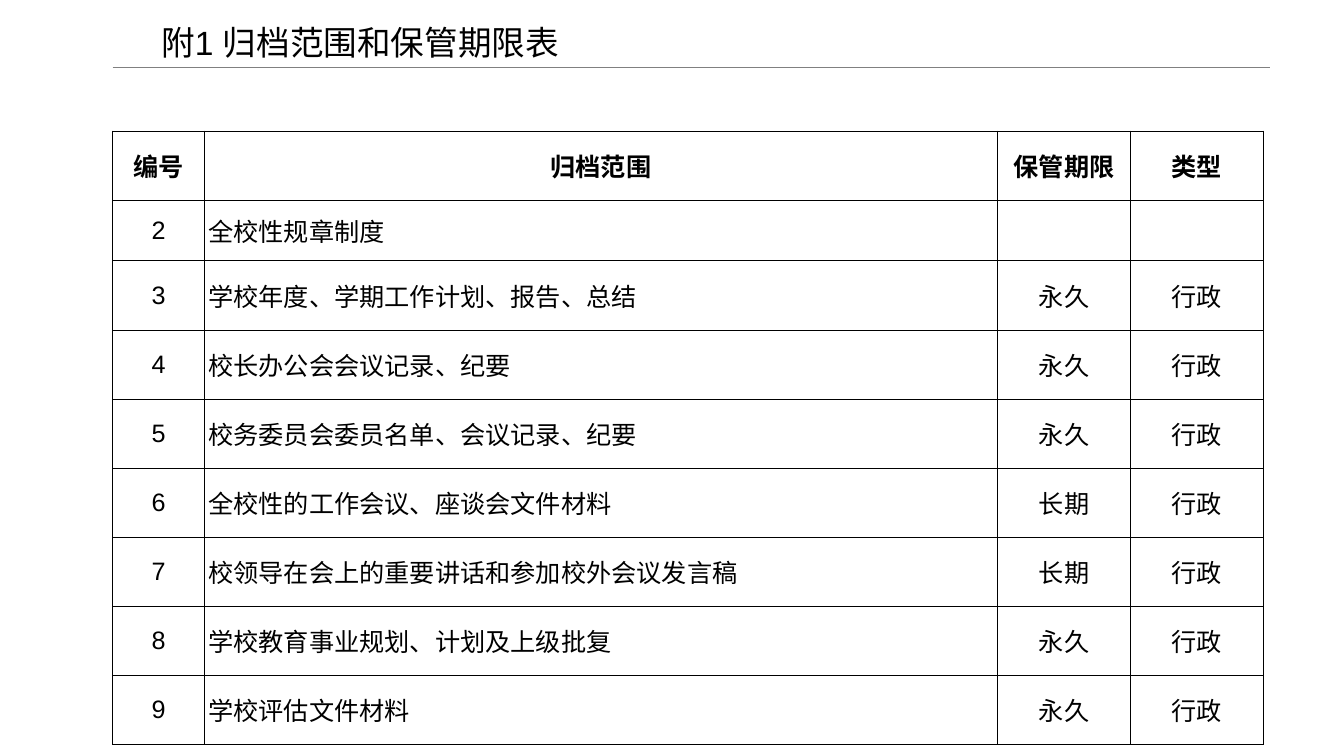
from dataclasses import dataclass

from lxml import etree
from pptx import Presentation
from pptx.dml.color import RGBColor
from pptx.enum import shapes, text
from pptx.oxml import ns
from pptx.util import Cm, Pt


@dataclass(frozen=True)
class Theme:
    font: str = "Arial"
    ink: str = "000000"
    rule: str = "808080"
    title_size: float = 24
    table_size: float = 18
    rule_width: float = 0.75
    border_width: float = 0.5


@dataclass(frozen=True)
class CellFormat:
    """Inner margins in centimetres, with alignment and weight."""
    side: float
    upright: float
    align: text.PP_ALIGN = text.PP_ALIGN.CENTER
    bold: bool = False


@dataclass(frozen=True)
class Record:
    number: str
    scope: str
    period: str = ""
    kind: str = ""

    def values(self) -> tuple[str, ...]:
        return self.number, self.scope, self.period, self.kind


THEME = Theme()
HEADING = CellFormat(side=0, upright=0.41, bold=True)
CENTRED = CellFormat(side=0.03, upright=0.41)
SCOPE = CellFormat(side=0.1, upright=0.3, align=text.PP_ALIGN.LEFT)
EMPTY = CellFormat(side=0.03, upright=0.1)

LEFT = 2.84
COLUMN_WIDTHS = (2.31, 19.99, 3.35, 3.35)
HEADING_HEIGHT, RECORD_HEIGHT = 1.6, 1.17

HEADINGS = Record("编号", "归档范围", "保管期限", "类型")
RECORDS = (
    Record("2", "全校性规章制度"),
    Record("3", "学校年度、学期工作计划、报告、总结", "永久", "行政"),
    Record("4", "校长办公会会议记录、纪要", "永久", "行政"),
    Record("5", "校务委员会委员名单、会议记录、纪要", "永久", "行政"),
    Record("6", "全校性的工作会议、座谈会文件材料", "长期", "行政"),
    Record("7", "校领导在会上的重要讲话和参加校外会议发言稿", "长期", "行政"),
    Record("8", "学校教育事业规划、计划及上级批复", "永久", "行政"),
    Record("9", "学校评估文件材料", "永久", "行政"),
)


def add_run(paragraph, words: str, size: float, bold: bool = False) -> None:
    run = paragraph.add_run()
    run.text = words
    run.font.name = THEME.font
    run.font.size = Pt(size)
    run.font.bold = bold
    run.font.color.rgb = RGBColor.from_string(THEME.ink)


def write_title(slide, words: str) -> None:
    title = slide.shapes.title
    title.left, title.top = Cm(3.81), Cm(0.36)
    title.width, title.height = Cm(28.09), Cm(1.52)
    frame = title.text_frame
    frame.auto_size = text.MSO_AUTO_SIZE.NONE
    frame.vertical_anchor = text.MSO_ANCHOR.MIDDLE
    heading = frame.paragraphs[0]
    heading.alignment = text.PP_ALIGN.LEFT
    heading.line_spacing = 0.9
    add_run(heading, words, THEME.title_size)


def add_title_rule(slide) -> None:
    rule = slide.shapes.add_connector(
        shapes.MSO_CONNECTOR.STRAIGHT, Cm(LEFT), Cm(1.7), Cm(32), Cm(1.7))
    rule.line.color.rgb = RGBColor.from_string(THEME.rule)
    rule.line.width = Pt(THEME.rule_width)
    etree.SubElement(rule._element.spPr, ns.qn("a:effectLst"))


def draw_borders(cell) -> None:
    properties = cell._tc.get_or_add_tcPr()
    for side in ("lnL", "lnR", "lnT", "lnB"):
        border = etree.SubElement(properties, ns.qn(f"a:{side}"),
                                  w=str(Pt(THEME.border_width)))
        fill = etree.SubElement(border, ns.qn("a:solidFill"))
        etree.SubElement(fill, ns.qn("a:srgbClr"), val=THEME.ink)


def fill_cell(cell, words: str, layout: CellFormat) -> None:
    draw_borders(cell)
    cell.fill.background()
    cell.vertical_anchor = text.MSO_ANCHOR.MIDDLE
    cell.margin_left = cell.margin_right = Cm(layout.side)
    cell.margin_top = cell.margin_bottom = Cm(layout.upright)
    if words:
        paragraph = cell.text_frame.paragraphs[0]
        paragraph.alignment = layout.align
        add_run(paragraph, words, THEME.table_size, layout.bold)


def choose_format(row: int, column: int, words: str) -> CellFormat:
    if row == 0:
        return HEADING
    if not words:
        return EMPTY
    return SCOPE if column == 1 else CENTRED


def add_archive_table(slide) -> None:
    records = (HEADINGS, *RECORDS)
    heights = (HEADING_HEIGHT, *[RECORD_HEIGHT] * len(RECORDS))
    archive = slide.shapes.add_table(
        len(records), len(COLUMN_WIDTHS), Cm(LEFT), Cm(3.3),
        Cm(sum(COLUMN_WIDTHS)), Cm(sum(heights))).table
    archive.first_row = archive.horz_banding = False
    for column, width in zip(archive.columns, COLUMN_WIDTHS):
        column.width = Cm(width)
    for row, (record, height) in enumerate(zip(records, heights)):
        archive.rows[row].height = Cm(height)
        for column, words in enumerate(record.values()):
            fill_cell(archive.cell(row, column), words,
                      choose_format(row, column, words))


def main() -> None:
    deck = Presentation()
    deck.slide_width, deck.slide_height = Cm(33.87), Cm(19.05)
    slide = deck.slides.add_slide(deck.slide_layouts[5])
    add_title_rule(slide)
    write_title(slide, "附1 归档范围和保管期限表")
    add_archive_table(slide)
    deck.save("out.pptx")


if __name__ == "__main__":
    main()
